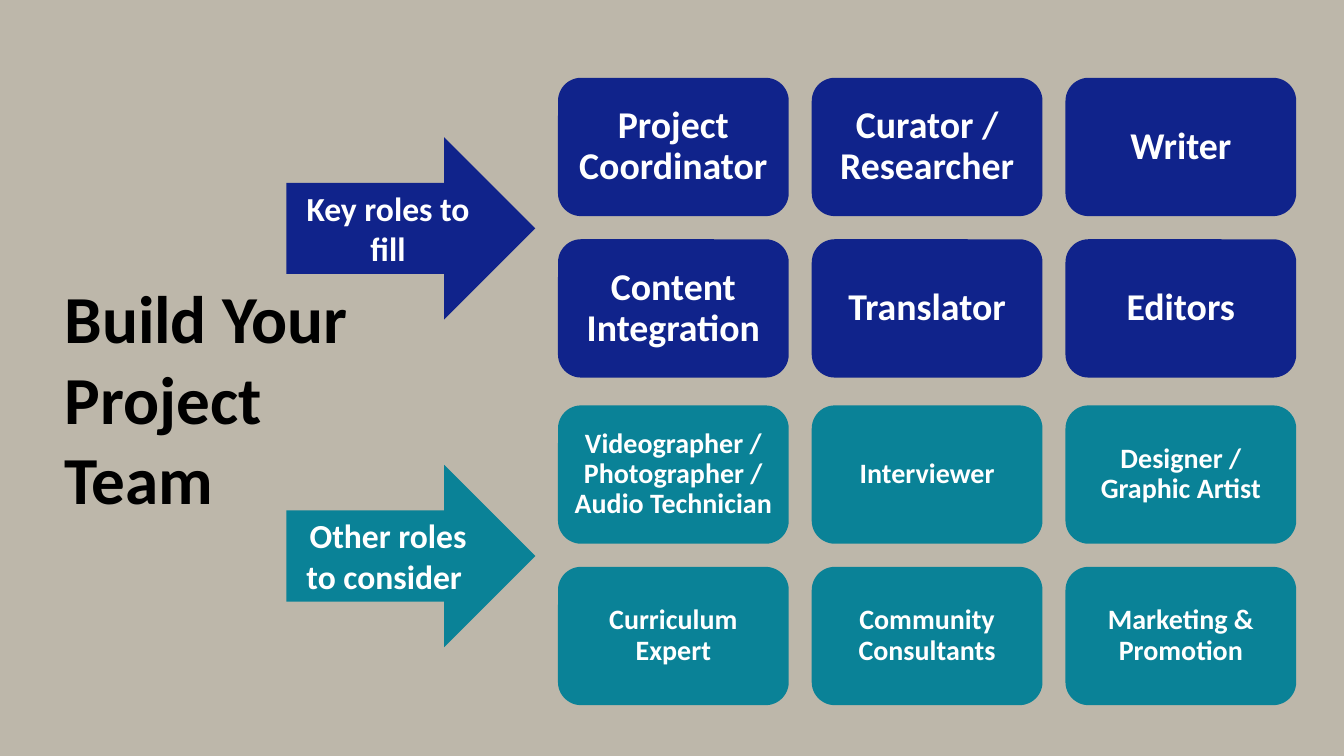
from pptx import Presentation
from pptx.dml.color import RGBColor
from pptx.enum.shapes import MSO_SHAPE as Shape
from pptx.enum.text import MSO_ANCHOR as Anchor, MSO_AUTO_SIZE as AutoSize, PP_ALIGN as Align
from pptx.util import Pt

COLORS = {"sand": "BDB7AA", "navy": "10238B", "teal": "0A8297", "white": "FFFFFF", "black": "000000"}
KEY_ROLES = ["Project Coordinator", "Curator / Researcher", "Writer",
             "Content Integration", "Translator", "Editors"]
OTHER_ROLES = ["Videographer / Photographer / Audio Technician", "Interviewer",
               "Designer / Graphic Artist", "Curriculum\vExpert",
               "Community Consultants", "Marketing & Promotion"]
COLUMNS = 3
CARD_LEFT, CARD_WIDTH, CARD_HEIGHT = 398.6, 164.8, 98.8
COLUMN_STEP, ROW_STEP = 181.25, 115.3


def color(name):
    return RGBColor.from_string(COLORS[name])


def apply(target, values):
    for name, value in values.items():
        setattr(target, name, value)


def write(box, text, size, ink, frame_format, para_format):
    frame = box.text_frame
    apply(frame, {"word_wrap": True, **frame_format})
    para = frame.paragraphs[0]
    para.text = text
    apply(para, para_format)
    for span in para.runs:
        apply(span.font, {"name": "Calibri", "size": Pt(size), "bold": True})
        span.font.color.rgb = color(ink)


def add_block(page, kind, left, top, width, height, fill):
    block = page.shapes.add_shape(kind, Pt(left), Pt(top), Pt(width), Pt(height))
    block.shadow.inherit = False
    block.fill.solid()
    block.fill.fore_color.rgb = color(fill)
    block.line.fill.background()
    return block


def add_title(page, text):
    box = page.shapes.add_textbox(Pt(46), Pt(197.5), Pt(231), Pt(145.5))
    margins = {"margin_left": 0, "margin_top": 0, "margin_right": 0, "margin_bottom": Pt(20)}
    write(box, text, 48, "black", {"vertical_anchor": Anchor.TOP, **margins}, {"alignment": Align.LEFT})


def add_arrow(page, top, text, fill):
    arrow = add_block(page, Shape.RIGHT_ARROW, 204.6, top, 177.8, 130.3, fill)
    frame_format = {"vertical_anchor": Anchor.TOP, "auto_size": AutoSize.SHAPE_TO_FIT_TEXT}
    write(arrow, text, 24, "white", frame_format, {"alignment": Align.CENTER})


def add_cards(page, top, roles, fill, size, inset):
    sides = ("left", "top", "right", "bottom")
    frame_format = {f"margin_{side}": Pt(inset) for side in sides}
    frame_format["vertical_anchor"] = Anchor.MIDDLE
    for index, role in enumerate(roles):
        row, column = divmod(index, COLUMNS)
        card = add_block(page, Shape.ROUNDED_RECTANGLE, CARD_LEFT + column * COLUMN_STEP,
                         top + row * ROW_STEP, CARD_WIDTH, CARD_HEIGHT, fill)
        write(card, role, size, "white", frame_format,
              {"alignment": Align.CENTER, "line_spacing": 0.9})


def main():
    """Build the project team slide and save it."""
    deck = Presentation()
    apply(deck, {"slide_width": Pt(960), "slide_height": Pt(540)})
    page = deck.slides.add_slide(deck.slide_layouts[6])
    page.background.fill.solid()
    page.background.fill.fore_color.rgb = color("sand")
    add_title(page, "Build Your Project Team")
    add_arrow(page, 98, "Key roles to fill", "navy")
    add_cards(page, 55.6, KEY_ROLES, "navy", 27, 8)
    add_arrow(page, 332, "Other roles to consider ", "teal")
    add_cards(page, 289.6, OTHER_ROLES, "teal", 20, 6)
    deck.save("out.pptx")


if __name__ == "__main__":
    main()
